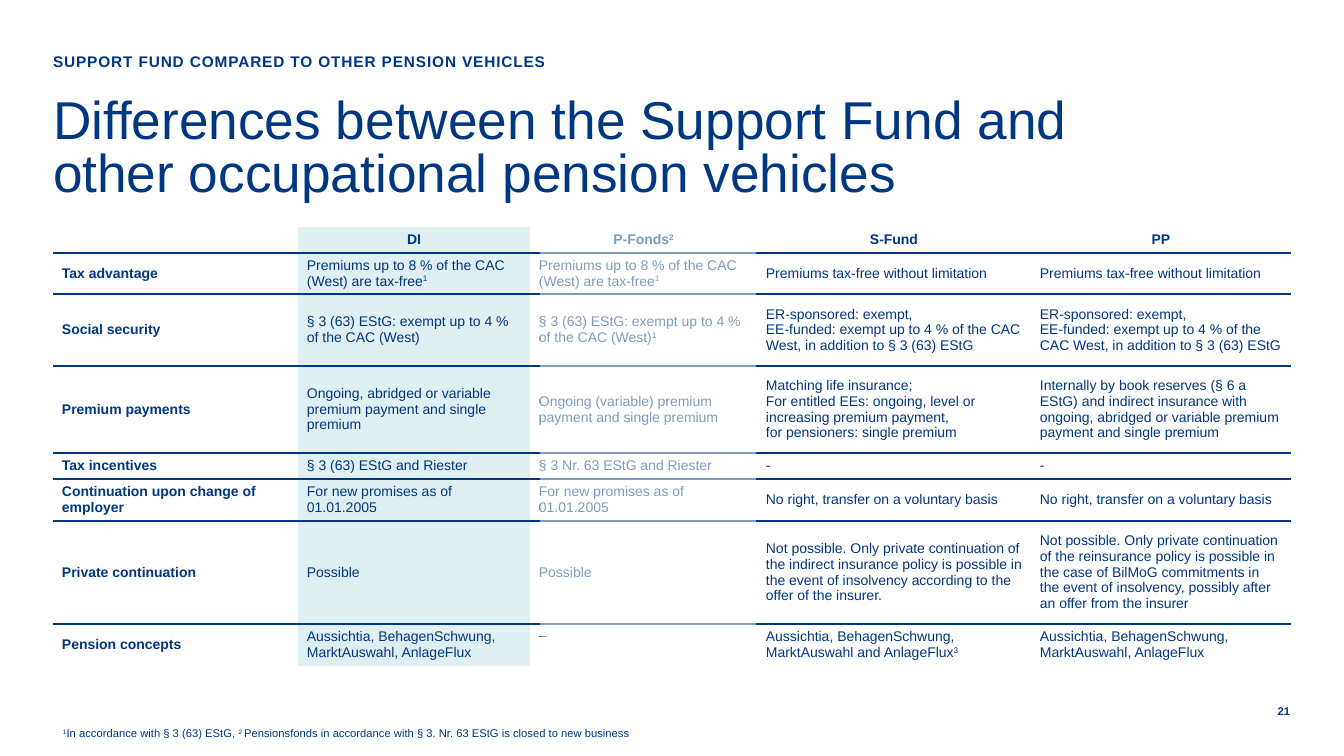
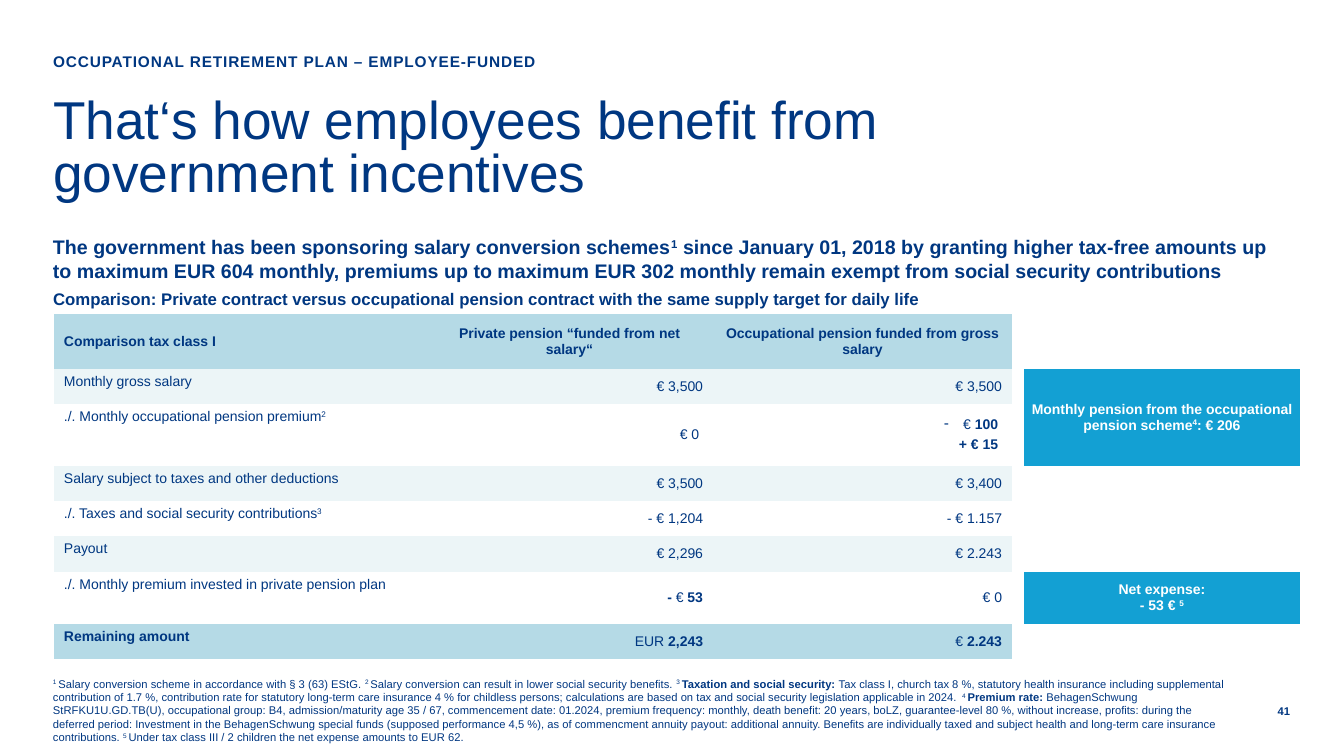
import pptx
import pptx.util
import pptx.dml.color
import pptx.enum.shapes
import pptx.enum.text
import pptx.oxml.ns
from lxml import etree

PX = 914400 / 100.8
FONT = "Arial"
NAVY = pptx.dml.color.RGBColor(0x00, 0x37, 0x81)
WHITE = pptx.dml.color.RGBColor(0xFF, 0xFF, 0xFF)
PALE = pptx.dml.color.RGBColor(0xDF, 0xEF, 0xF2)
STRIPE = pptx.dml.color.RGBColor(0xEC, 0xF5, 0xF7)
SKY = pptx.dml.color.RGBColor(0xB5, 0xDA, 0xE6)
CYAN = pptx.dml.color.RGBColor(0x13, 0xA0, 0xD3)
LEFT = pptx.enum.text.PP_ALIGN.LEFT
CENTER = pptx.enum.text.PP_ALIGN.CENTER
RIGHT = pptx.enum.text.PP_ALIGN.RIGHT
TOP = pptx.enum.text.MSO_ANCHOR.TOP
MIDDLE = pptx.enum.text.MSO_ANCHOR.MIDDLE
BOTTOM = pptx.enum.text.MSO_ANCHOR.BOTTOM
NO_GRID = "{2D5ABB26-0587-4C30-8999-92F81FD0307C}"
MARGIN = 53
qn = pptx.oxml.ns.qn


def write(tf, text, size, bold=False, align=LEFT, color=NAVY, gap=0):
    """Fill a text frame; ^x^ is superscript and *x* switches bold."""
    lines = text.split("\n")
    for i, line in enumerate(lines):
        p = tf.paragraphs[0] if i == 0 else tf.add_paragraph()
        p.alignment = align
        p.space_before = pptx.util.Pt(0)
        p.space_after = pptx.util.Pt(gap if i < len(lines) - 1 else 0)
        if not line:
            p._p.get_or_add_endParaRPr().set("sz", str(size * 100))
        for j, part in enumerate(line.split("^")):
            for k, piece in enumerate(part.split("*")):
                if not piece:
                    continue
                r = p.add_run()
                r.text = piece
                r.font.name = FONT
                r.font.size = pptx.util.Pt(size)
                r.font.bold = bold != (k % 2 == 1)
                r.font.color.rgb = color
                if j % 2:
                    r._r.get_or_add_rPr().set("baseline", "30000")


def add_grid(s, x, y, widths, heights):
    box = [round(v * PX) for v in (x, y, sum(widths), sum(heights))]
    table = s.shapes.add_table(len(heights), len(widths), *box).table
    table.first_row = table.horz_banding = False
    table._tbl.tblPr.find(qn("a:tableStyleId")).text = NO_GRID
    for col, width in zip(table.columns, widths):
        col.width = round(width * PX)
    for row, height in zip(table.rows, heights):
        row.height = round(height * PX)
    return table


prs = pptx.Presentation()
prs.slide_width, prs.slide_height = round(1344 * PX), round(756 * PX)

headings = [
    ("SUPPORT FUND COMPARED TO OTHER PENSION VEHICLES",
     "Differences between the Support Fund and other occupational pension vehicles", "21"),
    ("OCCUPATIONAL RETIREMENT PLAN – EMPLOYEE-FUNDED",
     "That‘s how employees benefit from government incentives", "41"),
]
footnotes = [
    "^1 ^Salary conversion scheme in accordance with § 3 (63) EStG.",
    "^2 ^Salary conversion can result in lower social security benefits.",
    "^3 ^*Taxation and social security: *Tax class I, church tax 8 %, statutory health insurance "
    "including supplemental contribution of 1.7 %, contribution rate for statutory long-term care "
    "insurance 4 % for childless persons; calculations are based on tax and social security "
    "legislation applicable in 2024.",
    "^4 ^*Premium rate: *BehagenSchwung StRFKU1U.GD.TB(U), occupational group: B4, "
    "admission/maturity age 35 / 67, commencement date: 01.2024, premium frequency: monthly, "
    "death benefit: 20 years, boLZ, guarantee-level 80 %, without increase, profits: during the "
    "deferred period: Investment in the BehagenSchwung special funds (supposed performance "
    "4,5 %), as of commencment annuity payout: additional annuity. Benefits are individually "
    "taxed and subject health and long-term care insurance contributions.",
    "^5 ^Under tax class III / 2 children the net expense amounts to EUR 62.",
]
texts = [
    (0, 63, 703, 771, 37,
     "^1^In accordance with § 3 (63) EStG, ^2 ^Pensionsfonds in accordance with "
     "§ 3. Nr. 63 EStG is closed to new business", 8, False, LEFT, BOTTOM),
    (1, MARGIN, 235, 1238, 47,
     "The government has been sponsoring salary conversion schemes^1^ since January 01, 2018 "
     "by granting higher tax-free amounts up to maximum EUR 604 monthly, premiums up to "
     "maximum EUR 302 monthly remain exempt from social security contributions",
     14, True, LEFT, TOP),
    (1, MARGIN, 281, 889, 36,
     "Comparison: Private contract versus occupational pension contract with the same "
     "supply target for daily life", 12, True, LEFT, MIDDLE),
    (1, MARGIN, 637, 1178, 107, " ".join(footnotes), 8, False, LEFT, BOTTOM),
]

for n, (kicker, title, number) in enumerate(headings):
    s = prs.slides.add_slide(prs.slide_layouts[1])
    heads = [
        (s.shapes.title, 97, 103, title, 38, False),
        (s.placeholders[1], 52, 28, kicker, 11, True),
    ]
    for sp, y, height, text, size, bold in heads:
        sp.left, sp.top = round(MARGIN * PX), round(y * PX)
        sp.width, sp.height = round(1028 * PX), round(height * PX)
        tf = sp.text_frame
        tf.margin_left = tf.margin_right = tf.margin_top = tf.margin_bottom = 0
        tf.vertical_anchor = TOP
        tf.auto_size = pptx.enum.text.MSO_AUTO_SIZE.NONE
        write(tf, text, size, bold)
    s.shapes.title.text_frame.paragraphs[0].line_spacing = pptx.util.Pt(38)
    p = s.placeholders[1].text_frame.paragraphs[0]
    pPr = p._p.get_or_add_pPr()
    pPr.set("marL", "0")
    pPr.set("indent", "0")
    etree.SubElement(pPr, qn("a:buNone"))
    p.runs[0]._r.get_or_add_rPr().set("spc", "60")
    texts.append((n, 1261, 703, 29, 16, number, 8, True, RIGHT, MIDDLE))

vehicles = [
    ("", "DI", "P-Fonds^2^", "S-Fund", "PP"),
    ("Tax advantage",
     "Premiums up to 8 % of the CAC (West) are tax-free^1^",
     "Premiums up to 8 % of the CAC (West) are tax-free^1^",
     "Premiums tax-free without limitation",
     "Premiums tax-free without limitation"),
    ("Social security",
     "§ 3 (63) EStG: exempt up to 4 % of the CAC (West)",
     "§ 3 (63) EStG: exempt up to 4 % of the CAC (West)^1^",
     "ER-sponsored: exempt,\nEE-funded: exempt up to 4 % of the CAC West, in addition to § 3 (63) EStG",
     "ER-sponsored: exempt,\nEE-funded: exempt up to 4 % of the CAC West, in addition to § 3 (63) EStG"),
    ("Premium payments",
     "Ongoing, abridged or variable premium payment and single premium",
     "Ongoing (variable) premium payment and single premium",
     "Matching life insurance;\nFor entitled EEs: ongoing, level or increasing premium payment,\n"
     "for pensioners: single premium",
     "Internally by book reserves (§ 6 a EStG) and indirect insurance with ongoing, abridged or "
     "variable premium payment and single premium"),
    ("Tax incentives", "§ 3 (63) EStG and Riester", "§ 3 Nr. 63 EStG and Riester", "-", "-"),
    ("Continuation upon change of employer",
     "For new promises as of 01.01.2005", "For new promises as of 01.01.2005",
     "No right, transfer on a voluntary basis", "No right, transfer on a voluntary basis"),
    ("Private continuation", "Possible", "Possible",
     "Not possible. Only private continuation of the indirect insurance policy is possible in the "
     "event of insolvency according to the offer of the insurer.",
     "Not possible. Only private continuation of the reinsurance policy is possible in the case of "
     "BilMoG commitments in the event of insolvency, possibly after an offer from the insurer"),
    ("Pension concepts",
     "Aussichtia, BehagenSchwung, MarktAuswahl, AnlageFlux", "–",
     "Aussichtia, BehagenSchwung, MarktAuswahl and AnlageFlux^3^",
     "Aussichtia, BehagenSchwung, MarktAuswahl, AnlageFlux"),
]
s = prs.slides[0]
table = add_grid(s, MARGIN, 227, [245, 232, 227, 274, 260], [26, 41, 72, 87, 26, 42, 103, 42])
for i, row in enumerate(vehicles):
    for j, text in enumerate(row):
        cell = table.cell(i, j)
        cell.margin_left = cell.margin_right = round(9 * PX)
        cell.margin_top = cell.margin_bottom = round(4 * PX)
        cell.vertical_anchor = TOP if text == "–" else MIDDLE
        if i < len(vehicles) - 1:
            ln = etree.SubElement(cell._tc.get_or_add_tcPr(), qn("a:lnB"), w="12700")
            line_fill = etree.SubElement(ln, qn("a:solidFill"))
            etree.SubElement(line_fill, qn("a:srgbClr"), val=str(NAVY))
        if j == 1:
            cell.fill.solid()
            cell.fill.fore_color.rgb = PALE
        else:
            cell.fill.background()
        write(cell.text_frame, text, 10, i == 0 or j == 0, CENTER if i == 0 else LEFT)

veil = s.shapes.add_shape(pptx.enum.shapes.MSO_SHAPE.RECTANGLE,
                          *[round(v * PX) for v in (540, 231, 216, 449)])
veil.shadow.inherit = False
veil.line.fill.background()
veil.fill.solid()
veil.fill.fore_color.rgb = WHITE
clr = veil._element.spPr.find(qn("a:solidFill")).find(qn("a:srgbClr"))
etree.SubElement(clr, qn("a:alpha"), val="50000")

pension = "Monthly pension from the occupational pension scheme^4^: € 206"
expense = "Net expense:\n- 53 € ^5^"
salaries = [
    ("Comparison tax class I", "Private pension “funded from net salary“",
     "Occupational pension funded from gross salary", "", ""),
    ("Monthly gross salary", "€ 3,500", "€ 3,500", "", pension),
    ("./. Monthly occupational pension premium^2^", "€ 0 ", "€ *100 *\n*+ € 15 *", "", ""),
    ("Salary subject to taxes and other deductions", "€ 3,500", "€ 3,400", "", ""),
    ("./. Taxes and social security contributions^3^", "- € 1,204", "- € 1.157", "", ""),
    ("Payout", "€ 2,296", "€ 2.243", "", ""),
    ("./. Monthly premium invested in private pension plan", "*- *€ *53*", "€ 0", "", expense),
    ("*Remaining amount*", "EUR *2,243*", "€ *2.243*", "", ""),
]
stripes = [SKY, STRIPE, WHITE, STRIPE, WHITE, STRIPE, WHITE, SKY]
table = add_grid(prs.slides[1], 54, 314, [372, 287, 299, 12, 276], [55, 35, 62, 35, 35, 36, 52, 35])
for i, row in enumerate(salaries):
    for j, text in enumerate(row):
        cell = table.cell(i, j)
        callout = j == 4 and text != ""
        cell.margin_left = cell.margin_right = round((10 if j < 3 else 4) * PX)
        cell.margin_top = cell.margin_bottom = round((5 if j < 3 else 4) * PX)
        cell.vertical_anchor = TOP if j == 0 and i > 0 else MIDDLE
        if j < 3 or callout:
            cell.fill.solid()
            cell.fill.fore_color.rgb = CYAN if callout else stripes[i]
        else:
            cell.fill.background()
        align = LEFT if j == 0 else CENTER if i == 0 or callout else RIGHT
        write(cell.text_frame, text, 10, i == 0 or callout, align,
              WHITE if callout else NAVY, 0 if callout else 3)
table.cell(1, 4).merge(table.cell(2, 4))
pPr = table.cell(2, 2).text_frame.paragraphs[0]._p.get_or_add_pPr()
pPr.set("marL", str(round(19 * PX)))
pPr.set("indent", str(round(-19 * PX)))
etree.SubElement(pPr, qn("a:buChar"), char="-")

for n, x, y, width, height, text, size, bold, align, anchor in texts:
    sp = prs.slides[n].shapes.add_textbox(*[round(v * PX) for v in (x, y, width, height)])
    tf = sp.text_frame
    tf.word_wrap = True
    tf.margin_left = tf.margin_right = tf.margin_top = tf.margin_bottom = 0
    tf.vertical_anchor = anchor
    write(tf, text, size, bold, align)

prs.save("out.pptx")
